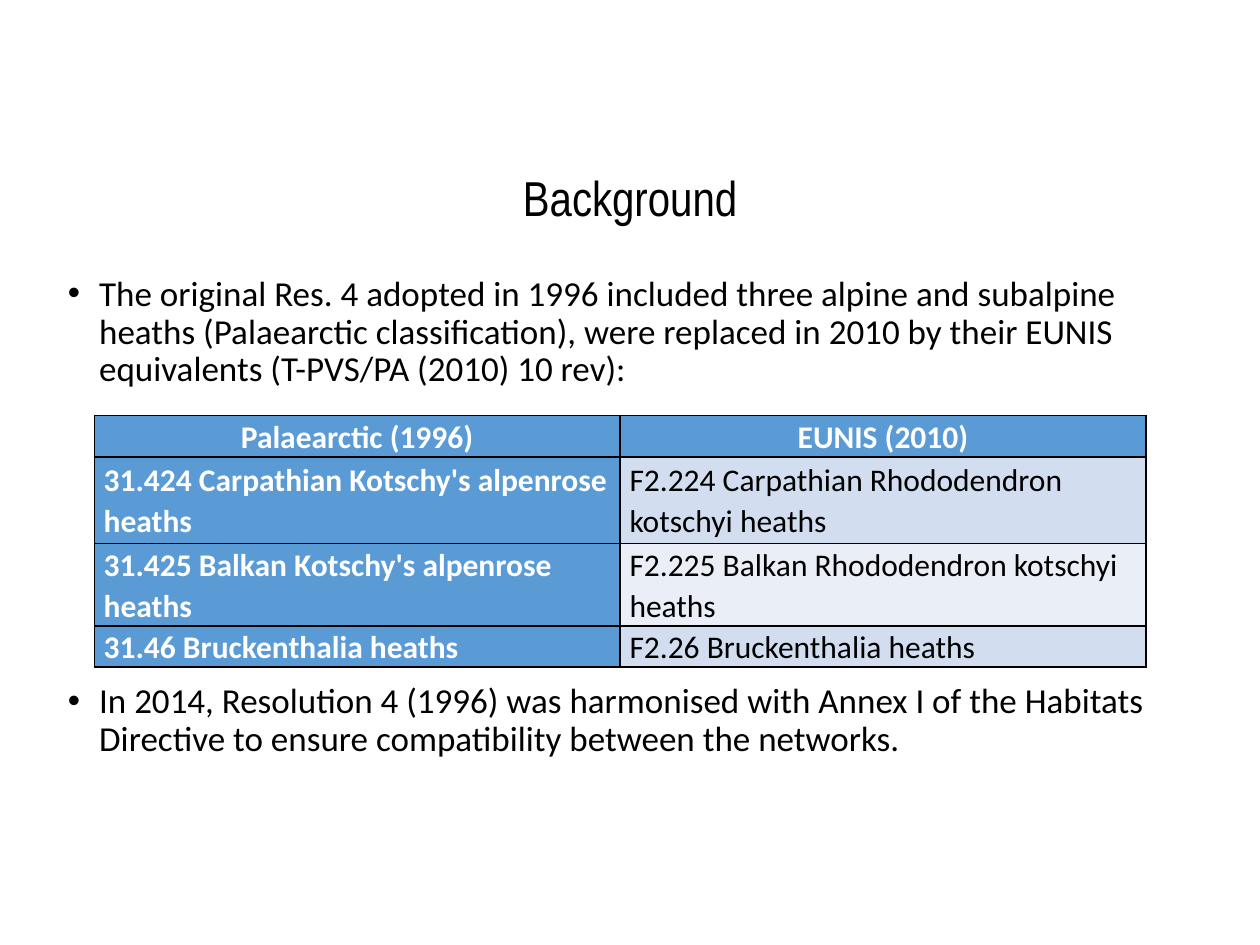
from lxml import etree
from pptx import Presentation
from pptx.dml.color import RGBColor
from pptx.enum.text import MSO_ANCHOR, PP_ALIGN
from pptx.oxml.ns import qn
from pptx.util import Cm, Pt

CENTER, LEFT = PP_ALIGN.CENTER, PP_ALIGN.LEFT
MIDDLE = MSO_ANCHOR.MIDDLE

BLACK = RGBColor(0x00, 0x00, 0x00)
WHITE = RGBColor(0xFF, 0xFF, 0xFF)
BLUE = RGBColor(0x5B, 0x9B, 0xD5)
BANDS = (RGBColor(0xD2, 0xDE, 0xEF), RGBColor(0xEA, 0xEF, 0xF7))

TABLE_GAP = Pt(168)  # room left between the two bullets for the table

BULLETS = [
    ("The original Res. 4 adopted in 1996 included three alpine and subalpine "
     "heaths (Palaearctic classification), were replaced in 2010 by their EUNIS "
     "equivalents (T-PVS/PA (2010) 10 rev):", Pt(0)),
    ("In 2014, Resolution 4 (1996) was harmonised with Annex I of the Habitats "
     "Directive to ensure compatibility between the networks.", TABLE_GAP),
]
HABITATS = [
    ("Palaearctic (1996)", "EUNIS (2010)"),
    ("31.424 Carpathian Kotschy's alpenrose heaths",
     "F2.224 Carpathian Rhododendron kotschyi heaths"),
    ("31.425 Balkan Kotschy's alpenrose heaths",
     "F2.225 Balkan Rhododendron kotschyi heaths"),
    ("31.46 Bruckenthalia heaths", "F2.26 Bruckenthalia heaths"),
]
ROW_HEIGHTS = (Cm(0.83), Cm(1.75), Cm(1.66), Cm(0.83))


def add_run(paragraph, text, size, color=BLACK, font="Calibri", bold=False):
    run = paragraph.add_run()
    run.text = text
    run.font.name = font
    run.font.size = Pt(size)
    run.font.bold = bold
    run.font.color.rgb = color


def add_title(slide, left, top, width, height):
    frame = slide.shapes.add_textbox(left, top, width, height).text_frame
    frame.word_wrap = True
    frame.vertical_anchor = MIDDLE
    heading = frame.paragraphs[0]
    heading.alignment = CENTER
    heading.line_spacing = 0.9
    add_run(heading, "Background", 28, font="Arial Narrow")


def set_bullet(paragraph):
    properties = paragraph._p.get_or_add_pPr()
    properties.set("marL", str(Cm(0.63)))
    properties.set("indent", str(-Cm(0.63)))
    etree.SubElement(properties, qn("a:buFont")).set("typeface", "Arial")
    etree.SubElement(properties, qn("a:buChar")).set("char", "•")


def add_bullets(slide, left, top, width, height):
    frame = slide.shapes.add_textbox(left, top, width, height).text_frame
    frame.word_wrap = True
    for index, (text, space_before) in enumerate(BULLETS):
        bullet = frame.add_paragraph() if index else frame.paragraphs[0]
        set_bullet(bullet)
        bullet.line_spacing = 0.9
        bullet.space_before = space_before
        add_run(bullet, text, 20)


def set_borders(cell):
    properties = cell._tc.get_or_add_tcPr()
    for side in ("lnL", "lnR", "lnT", "lnB"):
        line = etree.SubElement(properties, qn(f"a:{side}"), w=str(Pt(1)))
        fill = etree.SubElement(line, qn("a:solidFill"))
        etree.SubElement(fill, qn("a:srgbClr"), val=str(BLACK))


def fill_cell(cell, text, is_header, is_label, band):
    set_borders(cell)
    emphasised = is_header or is_label
    cell.fill.solid()
    cell.fill.fore_color.rgb = BLUE if emphasised else band
    cell.vertical_anchor = MIDDLE
    cell.margin_left = cell.margin_right = Cm(0.19)
    cell.margin_top = cell.margin_bottom = 0
    entry = cell.text_frame.paragraphs[0]
    entry.alignment = CENTER if is_header else LEFT
    entry.line_spacing = 1.07
    add_run(entry, text, 18, WHITE if emphasised else BLACK, bold=emphasised)


def add_habitat_table(slide, left, top, width):
    columns = len(HABITATS[0])
    table = slide.shapes.add_table(
        len(HABITATS), columns, left, top, width, sum(ROW_HEIGHTS)).table
    for column in table.columns:
        column.width = width // columns
    for r, (names, height) in enumerate(zip(HABITATS, ROW_HEIGHTS)):
        table.rows[r].height = height
        for c, name in enumerate(names):
            fill_cell(table.cell(r, c), name, r == 0, c == 0, BANDS[(r - 1) % 2])


def main():
    presentation = Presentation()
    presentation.slide_width = Cm(25.4)
    presentation.slide_height = Cm(19.05)
    slide = presentation.slides.add_slide(presentation.slide_layouts[6])
    add_title(slide, Cm(1.9), Cm(3.12), Cm(21.6), Cm(1.85))
    add_bullets(slide, Cm(1.12), Cm(5.44), Cm(23.16), Cm(12.22))
    add_habitat_table(slide, Cm(1.9), Cm(8.38), Cm(21.2))
    presentation.save("out.pptx")


if __name__ == "__main__":
    main()
